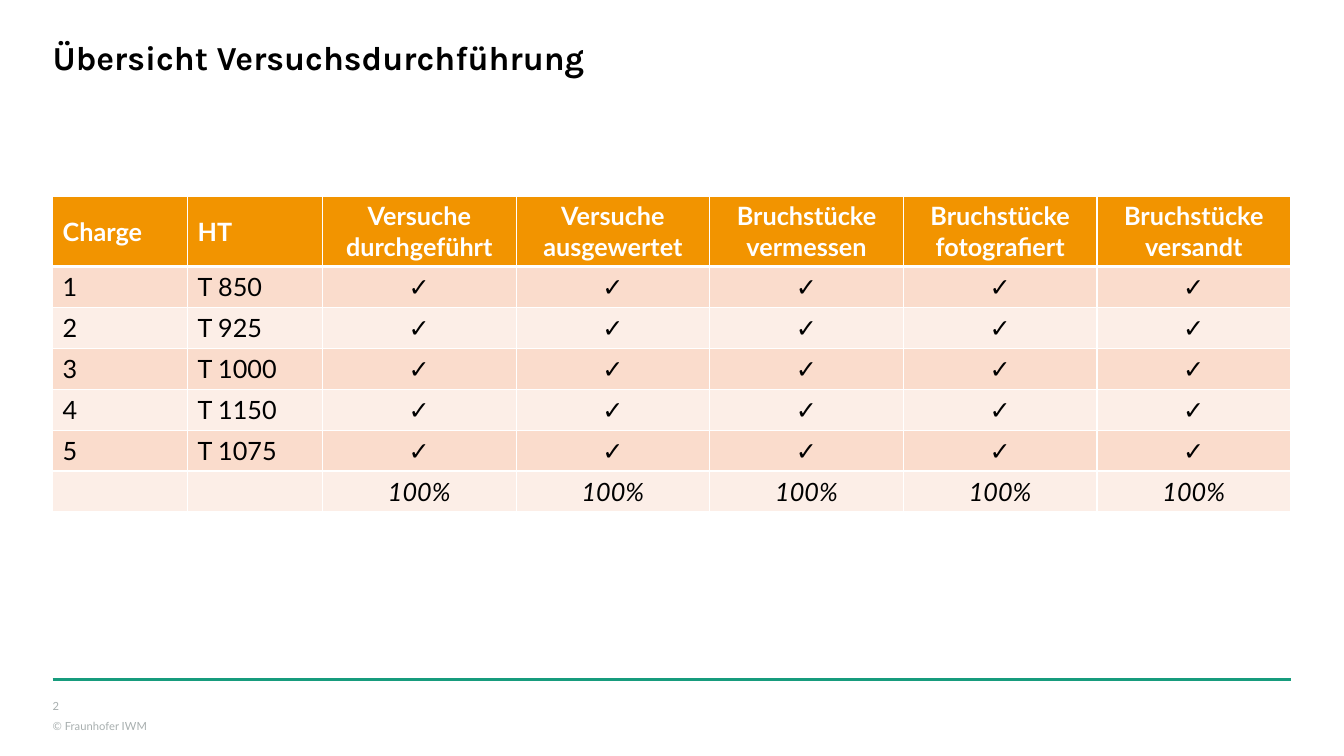
import pptx
import pptx.dml.color
import pptx.enum.shapes
import pptx.enum.text
import pptx.oxml
import pptx.oxml.ns
import pptx.util
from lxml import etree

Pt = pptx.util.Pt
Align = pptx.enum.text.PP_ALIGN
Anchor = pptx.enum.text.MSO_ANCHOR

TITLE = "Übersicht Versuchsdurchführung"
PAGE_NUMBER = "2"
COPYRIGHT = "© Fraunhofer IWM"
STEPS = ["Versuche durchgeführt", "Versuche ausgewertet", "Bruchstücke vermessen",
         "Bruchstücke fotografiert", "Bruchstücke versandt"]
BATCHES = [("1", "T 850"), ("2", "T 925"), ("3", "T 1000"), ("4", "T 1150"), ("5", "T 1075")]
DONE = "✓"
TOTAL = "100%"

THEME = {
    "title": {"name": "Karla", "size": Pt(24), "bold": True, "color": "000000"},
    "header": {"name": "Lato", "size": Pt(18), "bold": True, "color": "FFFFFF"},
    "body": {"name": "Lato", "size": Pt(18), "bold": False, "color": "000000"},
    "total": {"name": "Lato", "size": Pt(18), "bold": False, "italic": True, "color": "000000"},
    "footer": {"name": "Lato", "size": Pt(8), "color": "A8AFAF"},
    "header_fill": "F29400",
    "bands": ("FADCCC", "FCEEE7"),
    "border": "FFFFFF",
    "rule": "179C7D",
}

LEFT, WIDTH = 37.6, 884.4
TABLE_TOP, HEADER_HEIGHT, ROW_HEIGHT = 140, 50.4, 29.2
LABEL_WIDTH = 96.4
STEP_WIDTH = (WIDTH - 2 * LABEL_WIDTH) / len(STEPS)
RULE_TOP = 485.4


def rgb(value):
    return pptx.dml.color.RGBColor.from_string(value)


def write(paragraph, text, style):
    paragraph.text = text
    for name, value in style.items():
        if name == "color":
            paragraph.font.color.rgb = rgb(value)
        else:
            setattr(paragraph.font, name, value)


def add_text(slide, text, style, top, width, height):
    box = slide.shapes.add_textbox(Pt(LEFT), Pt(top), Pt(width), Pt(height))
    settings = {"word_wrap": True, "margin_left": 0, "margin_top": 0,
                "margin_right": 0, "margin_bottom": 0}
    for name, value in settings.items():
        setattr(box.text_frame, name, value)
    write(box.text_frame.paragraphs[0], text, THEME[style])


def add_rule(slide):
    rule = slide.shapes.add_connector(pptx.enum.shapes.MSO_CONNECTOR.STRAIGHT, Pt(LEFT),
                                      Pt(RULE_TOP), Pt(LEFT + WIDTH), Pt(RULE_TOP))
    rule.line.color.rgb = rgb(THEME["rule"])
    rule.line.width = Pt(2.5)
    etree.SubElement(rule._element.spPr, pptx.oxml.ns.qn("a:effectLst"))


def set_borders(cell, top, bottom):
    """Draw all four cell edges; top and bottom are widths in points."""
    properties = cell._tc.get_or_add_tcPr()
    for side, width in (("L", 1), ("R", 1), ("T", top), ("B", bottom)):
        properties.append(pptx.oxml.parse_xml(
            f'<a:ln{side} {pptx.oxml.ns.nsdecls("a")} w="{Pt(width)}"><a:solidFill>'
            f'<a:srgbClr val="{THEME["border"]}"/></a:solidFill></a:ln{side}>'))


def add_progress_table(slide):
    rows = [["Charge", "HT", *STEPS]]
    rows += [[*batch, *[DONE] * len(STEPS)] for batch in BATCHES]
    rows.append(["", "", *[TOTAL] * len(STEPS)])
    last = len(rows) - 1

    height = HEADER_HEIGHT + last * ROW_HEIGHT
    table = slide.shapes.add_table(len(rows), len(rows[0]), Pt(LEFT), Pt(TABLE_TOP),
                                   Pt(WIDTH), Pt(height)).table
    for index, column in enumerate(table.columns):
        column.width = Pt(LABEL_WIDTH if index < 2 else STEP_WIDTH)

    for row, texts in enumerate(rows):
        table.rows[row].height = Pt(HEADER_HEIGHT if row == 0 else ROW_HEIGHT)
        style = {0: "header", last: "total"}.get(row, "body")
        fill = THEME["header_fill"] if row == 0 else THEME["bands"][(row - 1) % 2]
        for column, text in enumerate(texts):
            cell = table.cell(row, column)
            set_borders(cell, top=3 if row == 1 else 1, bottom=3 if row == 0 else 1)
            cell.fill.solid()
            cell.fill.fore_color.rgb = rgb(fill)
            cell.vertical_anchor = Anchor.MIDDLE
            paragraph = cell.text_frame.paragraphs[0]
            paragraph.alignment = Align.LEFT if column < 2 else Align.CENTER
            write(paragraph, text, THEME[style])


def main():
    presentation = pptx.Presentation()
    presentation.slide_width, presentation.slide_height = Pt(960), Pt(540)
    slide = presentation.slides.add_slide(presentation.slide_layouts[6])
    add_rule(slide)
    add_text(slide, TITLE, "title", top=26.6, width=WIDTH, height=28.8)
    add_progress_table(slide)
    add_text(slide, PAGE_NUMBER, "footer", top=499.7, width=142, height=9.6)
    add_text(slide, COPYRIGHT, "footer", top=514, width=142, height=9.6)
    presentation.save("out.pptx")


if __name__ == "__main__":
    main()
